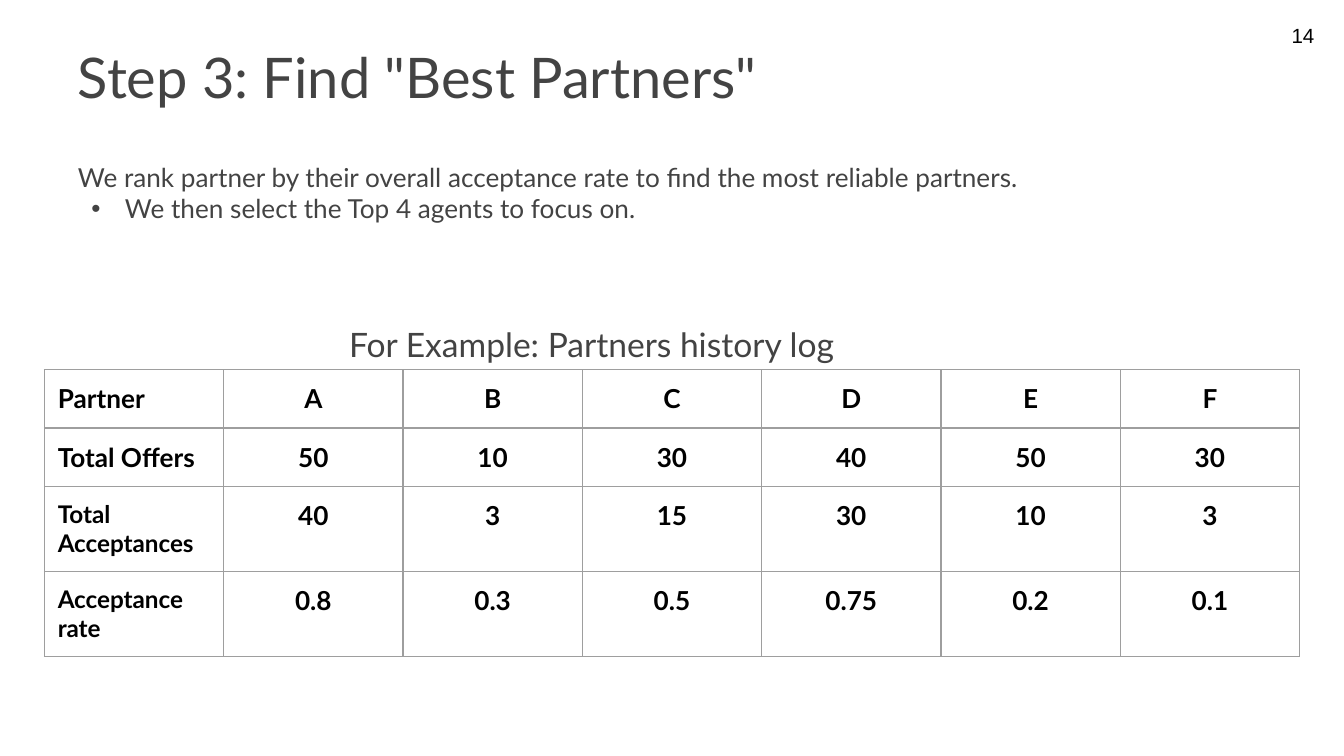
"""Build the slide on ranking partners by acceptance rate."""
from lxml import etree
from pptx import Presentation
from pptx.dml.color import RGBColor
from pptx.enum.text import MSO_ANCHOR, PP_ALIGN
from pptx.oxml.ns import qn
from pptx.util import Inches, Pt

LEFT, CENTER, RIGHT = PP_ALIGN.LEFT, PP_ALIGN.CENTER, PP_ALIGN.RIGHT
TOP, MIDDLE = MSO_ANCHOR.TOP, MSO_ANCHOR.MIDDLE
GREY = RGBColor(0x43, 0x43, 0x43)
BLACK = RGBColor(0, 0, 0)
BORDER = RGBColor(0x9E, 0x9E, 0x9E)

TITLE = 'Step 3: Find "Best Partners"'
INTRO = "We rank partner by their overall acceptance rate to find the most reliable partners."
BULLET = "We then select the Top 4 agents to focus on."
CAPTION = "For Example: Partners history log"
PAGE = "14"
HISTORY = [
    ("Partner", "A", "B", "C", "D", "E", "F"),
    ("Total Offers", "50", "10", "30", "40", "50", "30"),
    ("Total Acceptances", "40", "3", "15", "30", "10", "3"),
    ("Acceptance rate", "0.8", "0.3", "0.5", "0.75", "0.2", "0.1"),
]
LONG_LABEL = 12

WIDTH = 10
HEIGHT = WIDTH * 9 / 16
MARGIN, CONTENT_W = 0.51, 9
TABLE_X, TABLE_Y, ROW_H = 0.33, 2.75, 0.42
TABLE_W = WIDTH - 2 * TABLE_X
BOX_INSETS = (0.07, 0.04, 0.07, 0.04)
WIDE_INSETS = (0.1, 0.1, 0.1, 0.1)


def write(p, text, size=14, color=GREY, font="Lato", bold=False, align=LEFT, bullet=None):
    """Put formatted text into a paragraph."""
    p.alignment = align
    if bullet:
        pPr = p._p.get_or_add_pPr()
        pPr.set("marL", str(Inches(0.35)))
        pPr.set("indent", str(Inches(-0.25)))
        clr = etree.SubElement(pPr, qn("a:buClr"))
        etree.SubElement(clr, qn("a:srgbClr")).set("val", str(color))
        etree.SubElement(pPr, qn("a:buFont")).set("typeface", "Arial")
        etree.SubElement(pPr, qn("a:buChar")).set("char", bullet)
    r = p.add_run()
    r.text = text
    r.font.name, r.font.size, r.font.bold = font, Pt(size), bold
    r.font.color.rgb = color


def set_frame(sp, insets=BOX_INSETS, anchor=TOP):
    """Prepare the text frame of a shape."""
    tf = sp.text_frame
    tf.word_wrap = True
    tf.vertical_anchor = anchor
    tf.margin_left, tf.margin_top, tf.margin_right, tf.margin_bottom = map(Inches, insets)
    return tf


def add_box(s, x, y, w, h, **frame):
    """Add a text box and return its text frame."""
    return set_frame(s.shapes.add_textbox(*map(Inches, (x, y, w, h))), **frame)


def set_borders(cell):
    """Draw a thin line on every side of a cell."""
    tcPr = cell._tc.get_or_add_tcPr()
    for i, tag in enumerate(("a:lnL", "a:lnR", "a:lnT", "a:lnB")):
        ln = etree.Element(qn(tag), w=str(Pt(0.75)))
        fill = etree.SubElement(ln, qn("a:solidFill"))
        etree.SubElement(fill, qn("a:srgbClr")).set("val", str(BORDER))
        tcPr.insert(i, ln)


def add_history(s):
    """Add the table of partner history."""
    rows, cols = len(HISTORY), len(HISTORY[0])
    size = map(Inches, (TABLE_X, TABLE_Y, TABLE_W, rows * ROW_H))
    table = s.shapes.add_table(rows, cols, *size).table
    table.first_row = table.horz_banding = False
    for i, values in enumerate(HISTORY):
        for j, text in enumerate(values):
            cell = table.cell(i, j)
            cell.fill.background()
            set_borders(cell)
            cell.margin_left = cell.margin_right = Inches(0.1)
            cell.margin_top = cell.margin_bottom = Inches(0.1)
            write(cell.text_frame.paragraphs[0], text, color=BLACK, bold=True,
                  size=13 if len(text) > LONG_LABEL else 14,
                  align=CENTER if j else LEFT)


def main():
    """Build and save the slide."""
    prs = Presentation()
    prs.slide_width, prs.slide_height = Inches(WIDTH), Inches(HEIGHT)
    s = prs.slides.add_slide(prs.slide_layouts[5])

    title = s.shapes.title
    title.left, title.top, title.width, title.height = map(Inches, (MARGIN, 0.15, CONTENT_W, 0.83))
    write(set_frame(title, anchor=MIDDLE).paragraphs[0], TITLE, size=30)

    tf = add_box(s, MARGIN, 1.16, CONTENT_W, 1.3)
    write(tf.paragraphs[0], INTRO)
    write(tf.add_paragraph(), BULLET, bullet="•")

    tf = add_box(s, 7.52, 0.13, 2.33, 0.39)
    write(tf.paragraphs[0], PAGE, size=11, color=BLACK, font="Arial", align=RIGHT)

    add_history(s)
    tf = add_box(s, WIDTH / 4, 2.31, WIDTH / 2, 0.5, insets=WIDE_INSETS)
    write(tf.paragraphs[0], CAPTION, size=18)
    prs.save("out.pptx")


if __name__ == "__main__":
    main()
